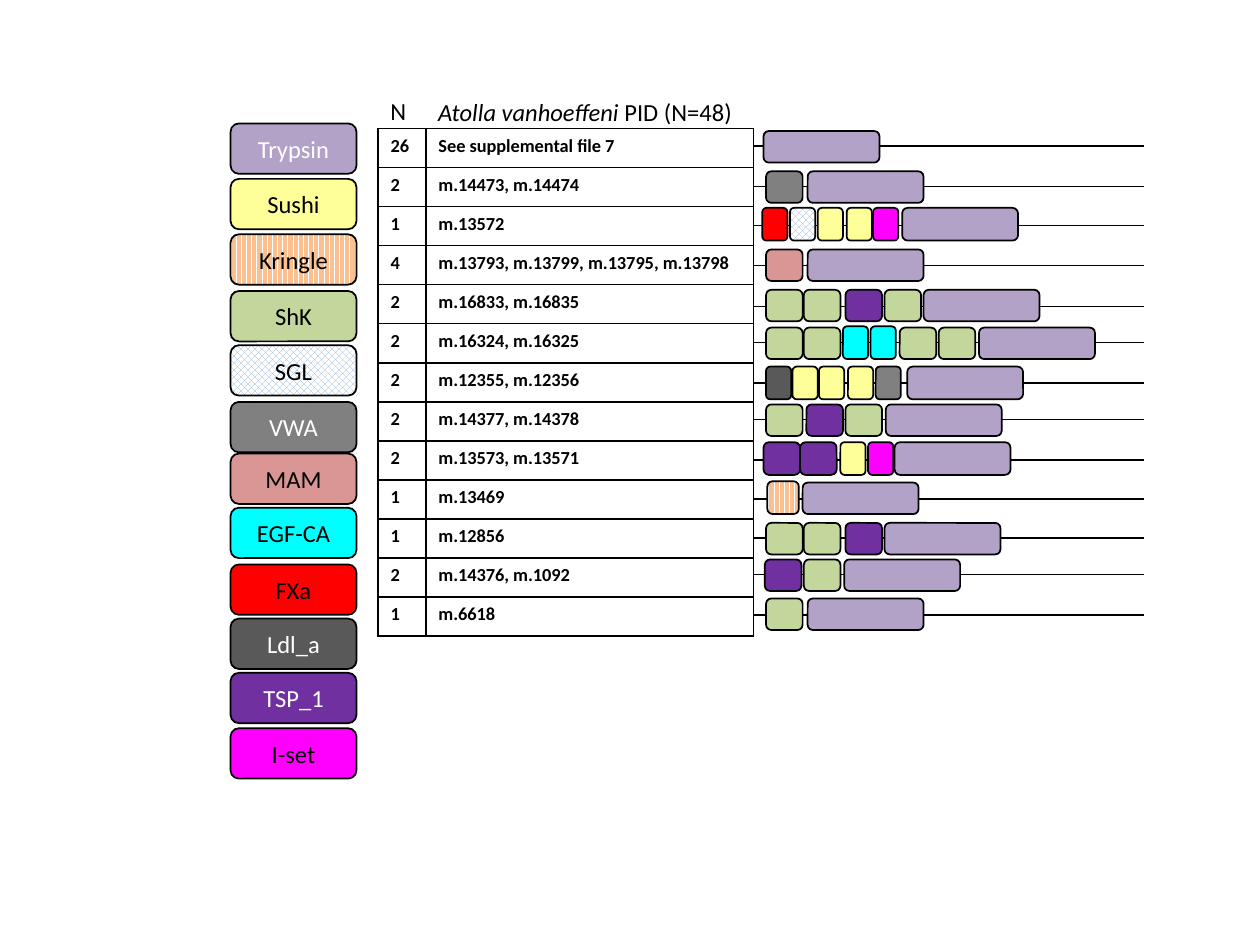
from lxml import etree
from pptx import Presentation
from pptx import util as u
from pptx.dml.color import RGBColor
from pptx.enum import dml, shapes, text
from pptx.oxml import ns

UNIT = u.Inches(0.01)  
COLORS = {
    "ink": "000000", "paper": "FFFFFF",
    "Trypsin": "B3A2C7", "Sushi": "FFFF99", "Kringle": "FAC090", "ShK": "C3D69B",
    "SGL": "95B3D7", "VWA": "808080", "MAM": "D99694", "EGF-CA": "00FFFF",
    "FXa": "FF0000", "Ldl_a": "595959", "TSP_1": "7030A0", "I-set": "FF00FF",
}
PATTERNS = {
    "Kringle": dml.MSO_PATTERN.DARK_VERTICAL,
    "SGL": dml.MSO_PATTERN.LARGE_CHECKER_BOARD,
}
LIGHT_TEXT = {"Trypsin", "VWA", "Ldl_a", "TSP_1"}
TALLER = {"EGF-CA", "Kringle"}
WIDTHS = {"Trypsin": 92, "Kringle": 25, "ShK": 29, "TSP_1": 29, "MAM": 29, "VWA": 29}
NARROW = 20
LEGEND = {
    "Trypsin": 0, "Sushi": 44, "Kringle": 88, "ShK": 133, "SGL": 176, "VWA": 221,
    "MAM": 262, "EGF-CA": 305, "FXa": 350, "Ldl_a": 393, "TSP_1": 436, "I-set": 480,
}
PROTEINS = [
    ("26", "See supplemental file 7"), ("2", "m.14473, m.14474"), ("1", "m.13572"),
    ("4", "m.13793, m.13799, m.13795, m.13798"), ("2", "m.16833, m.16835"),
    ("2", "m.16324, m.16325"), ("2", "m.12355, m.12356"), ("2", "m.14377, m.14378"),
    ("2", "m.13573, m.13571"), ("1", "m.13469"), ("1", "m.12856"),
    ("2", "m.14376, m.1092"), ("1", "m.6618"),
]
TRACKS = [
    (14, 12, 25, [("Trypsin", 8)]),
    (46, 12, 25, [("VWA", 10), ("Trypsin", 43)]),
    (77, 14, 26, [("FXa", 7), ("SGL", 29), ("Sushi", 51), ("Sushi", 74),
                  ("I-set", 95), ("Trypsin", 118)]),
    (109, 13, 25, [("MAM", 10), ("Trypsin", 43)]),
    (141, 13, 25, [("ShK", 10), ("ShK", 40), ("TSP_1", 73), ("ShK", 104),
                   ("Trypsin", 135)]),
    (170, 12, 25, [("ShK", 10), ("ShK", 40), ("EGF-CA", 71), ("EGF-CA", 93),
                   ("ShK", 116), ("ShK", 147), ("Trypsin", 179)]),
    (202, 13, 26, [("Ldl_a", 10), ("Sushi", 31), ("Sushi", 52), ("Sushi", 75),
                   ("VWA", 97, NARROW), ("Trypsin", 122)]),
    (231, 12, 25, [("ShK", 10), ("TSP_1", 42), ("ShK", 73), ("Trypsin", 105)]),
    (263, 14, 26, [("TSP_1", 8), ("TSP_1", 37), ("Sushi", 69), ("I-set", 91),
                   ("Trypsin", 112)]),
    (294, 13, 25, [("Kringle", 11), ("Trypsin", 39)]),
    (325, 12, 25, [("ShK", 10), ("ShK", 40), ("TSP_1", 73), ("Trypsin", 104)]),
    (354, 12, 25, [("TSP_1", 9), ("ShK", 40), ("Trypsin", 72)]),
    (386, 13, 25, [("ShK", 10), ("Trypsin", 43)]),
]


def grid(*cells):
    """Turn counts of grid cells into slide lengths."""
    return [round(cell * UNIT) for cell in cells]


def rgb(name):
    """Look up a named colour."""
    return RGBColor.from_string(COLORS[name])


def write(para, words, size=14, color="ink", bold=False, italic=False):
    """Add one formatted span to a paragraph."""
    span = para.add_run()
    span.text = words
    span.font.name = "Calibri"
    span.font.size = u.Pt(size)
    span.font.bold = bold
    span.font.italic = italic
    span.font.color.rgb = rgb(color)


def draw_domain(parent, name, left, top, width, height):
    """Draw a rounded block filled in the manner of its domain."""
    block = parent.add_shape(
        shapes.MSO_SHAPE.ROUNDED_RECTANGLE, *grid(left, top, width, height))
    block.shadow.inherit = False
    if name in PATTERNS:
        block.fill.patterned()
        block.fill.pattern = PATTERNS[name]
        block.fill.fore_color.rgb = rgb(name)
        block.fill.back_color.rgb = rgb("paper")
    else:
        block.fill.solid()
        block.fill.fore_color.rgb = rgb(name)
    block.line.color.rgb = rgb("ink")
    block.line.width = u.Pt(1)
    return block


def draw_legend(page, left, top, width, height):
    """Stack one labelled block for each domain."""
    for name, offset in LEGEND.items():
        block = draw_domain(page.shapes, name, left, top + offset, width, height)
        block.text_frame.vertical_anchor = text.MSO_ANCHOR.MIDDLE
        para = block.text_frame.paragraphs[0]
        para.alignment = text.PP_ALIGN.CENTER
        write(para, name, color="paper" if name in LIGHT_TEXT else "ink")


def draw_heading(page, left, top, width, height, spans):
    """Place a column heading made of (words, italic) spans."""
    box = page.shapes.add_textbox(*grid(left, top, width, height))
    box.text_frame.word_wrap = False
    box.text_frame.auto_size = text.MSO_AUTO_SIZE.SHAPE_TO_FIT_TEXT
    for words, italic in spans:
        write(box.text_frame.paragraphs[0], words, italic=italic)


def outline_cell(cell):
    """Give a cell thin borders on its four sides and no fill."""
    properties = cell._tc.get_or_add_tcPr()
    for side in ("lnL", "lnR", "lnT", "lnB"):
        border = etree.SubElement(properties, ns.qn(f"a:{side}"), w=str(u.Pt(1)))
        fill = etree.SubElement(border, ns.qn("a:solidFill"))
        etree.SubElement(fill, ns.qn("a:srgbClr"), val=COLORS["ink"])
    cell.fill.background()


def draw_table(page, left, top, width, height, count_width):
    """List the protein identifiers beside their counts."""
    table = page.shapes.add_table(
        len(PROTEINS), 2, *grid(left, top, width, height)).table
    table.first_row = table.horz_banding = False
    for column, size in zip(table.columns, grid(count_width, width - count_width)):
        column.width = size
    for row, values in zip(table.rows, PROTEINS):
        row.height, = grid(height / len(PROTEINS))
        for cell, words in zip(row.cells, values):
            write(cell.text_frame.paragraphs[0], words, size=10.5, bold=True)
            outline_cell(cell)


def draw_tracks(page, left, top, width):
    """Thread the domains of each protein on a line, one group a row."""
    for axis, rise, height, domains in TRACKS:
        group = page.shapes.add_group_shape().shapes
        y = top + axis
        line = group.add_connector(
            shapes.MSO_CONNECTOR.STRAIGHT, *grid(left, y, left + width, y))
        line.line.color.rgb = rgb("ink")
        line.line.width = u.Pt(0.75)
        etree.SubElement(line._element.spPr, ns.qn("a:effectLst"))
        for name, offset, *size in domains:
            extra = int(name in TALLER)
            block_width = size[0] if size else WIDTHS.get(name, NARROW)
            draw_domain(group, name, left + offset, y - rise - extra,
                        block_width, height + extra)


def main():
    """Build the slide of domain architectures."""
    deck = Presentation()
    deck.slide_width, deck.slide_height = grid(1000, 750)
    page = deck.slides.add_slide(deck.slide_layouts[6])
    draw_tracks(page, 598, 102, 310)
    draw_heading(page, 338, 72, 256, 34,
                 [("Atolla vanhoeffeni", True), (" PID (N=48)", False)])
    draw_heading(page, 300, 71, 33, 34, [("N", False)])
    draw_table(page, 300, 102, 298, 403, 38)
    draw_legend(page, 183, 98, 100, 40)
    deck.save("out.pptx")


if __name__ == "__main__":
    main()
